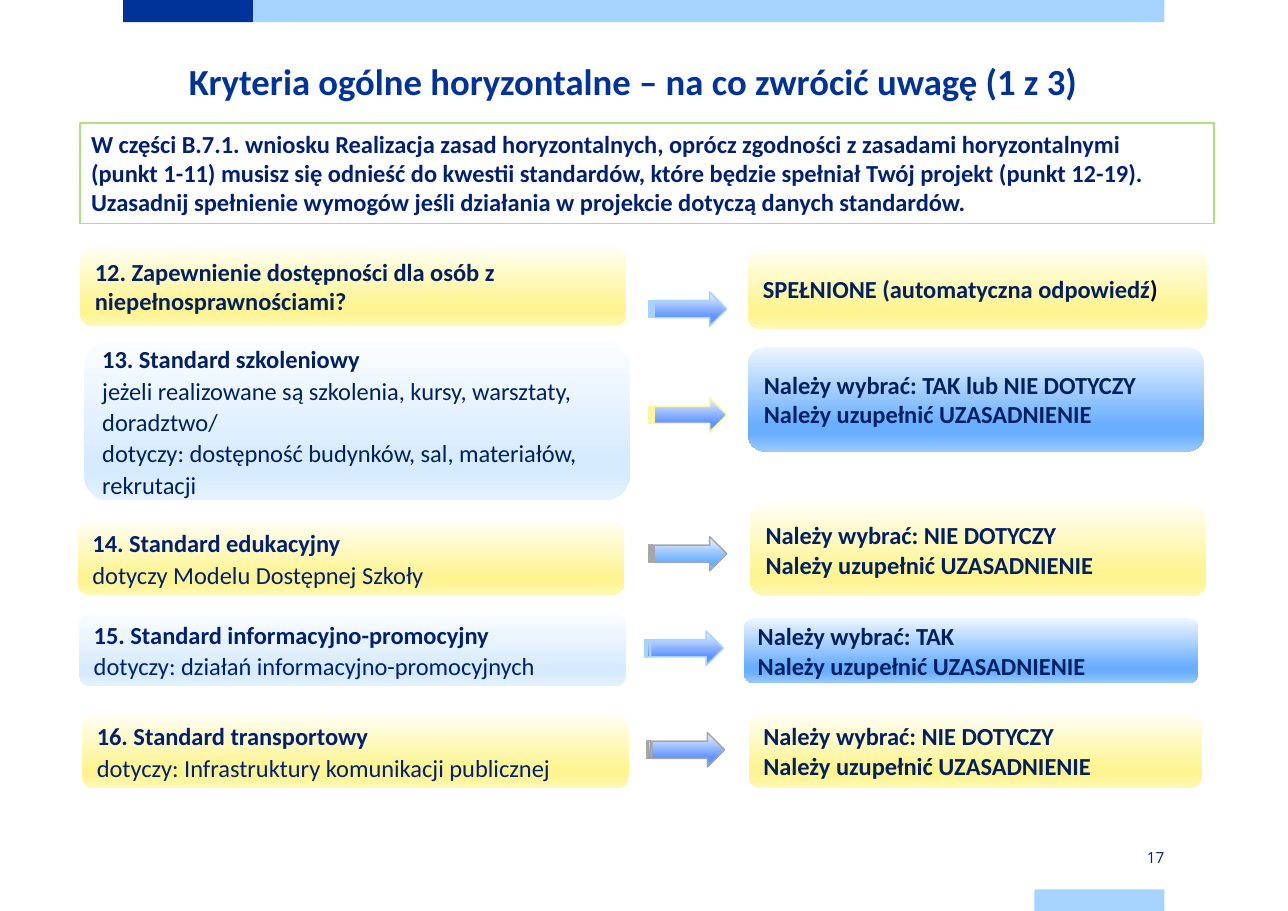
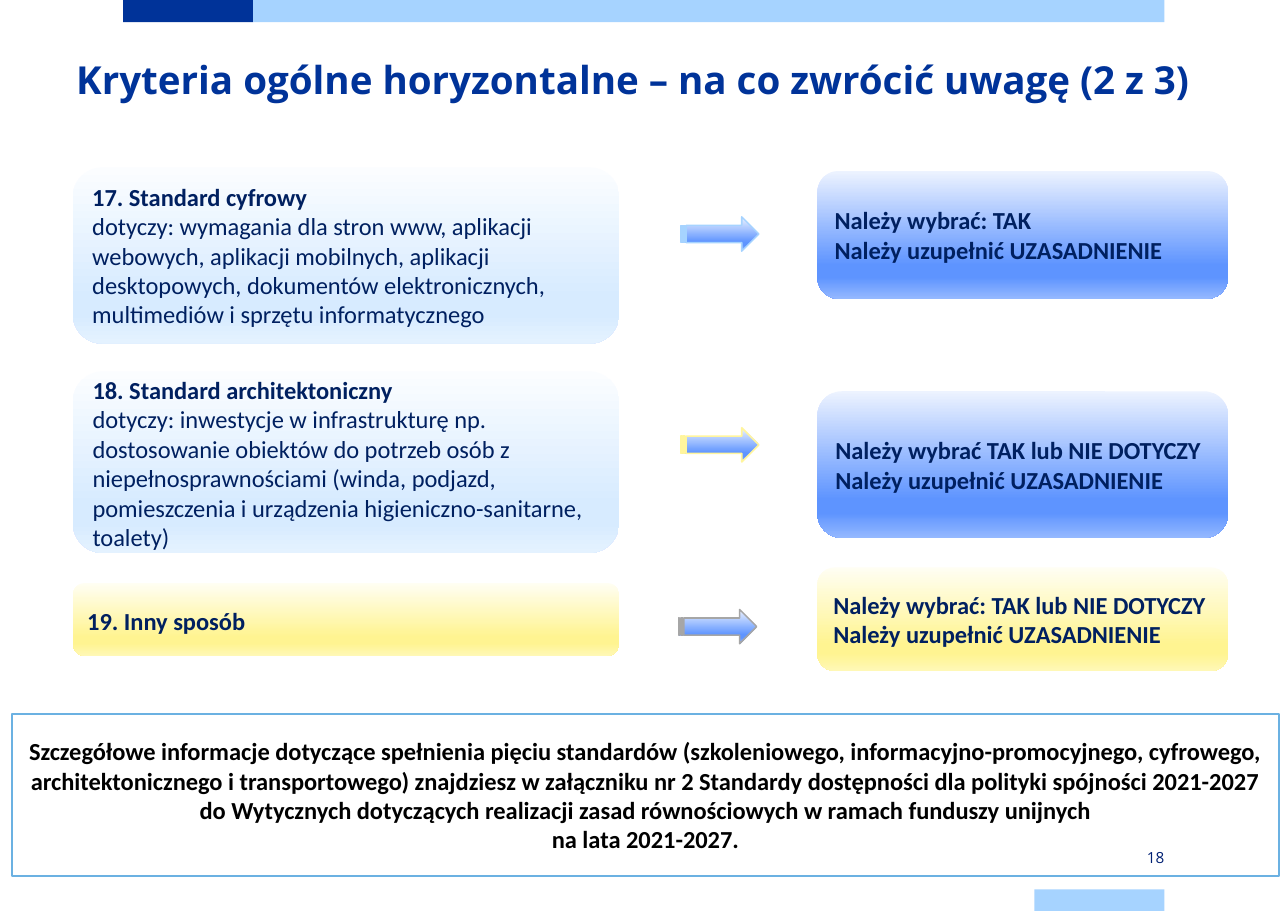
from dataclasses import dataclass

from lxml.etree import SubElement
from pptx import Presentation
from pptx.dml.color import RGBColor
from pptx.enum.shapes import MSO_SHAPE
from pptx.enum.text import MSO_ANCHOR, PP_ALIGN
from pptx.oxml.ns import qn
from pptx.util import Cm, Pt


@dataclass(frozen=True)
class Theme:
    """Colours, gradients, fonts and type sizes of the deck."""
    blue: str = "003399"
    pale: str = "A6D3FF"
    navy: str = "002060"
    ink: str = "002073"
    black: str = "000000"
    white: str = "FFFFFF"
    green: str = "B2DE82"
    lemon: str = "FFF59D"
    grey: str = "A6A6A6"
    frame: str = "6BB1E2"
    yellow: tuple = ("FFFEF3", "FFF491", "FFF491", "FFF8B6")
    sky: tuple = ("FBFDFF", "D7EBFF", "D7EBFF", "E4F2FF")
    azure: tuple = ("EEF6FF", "69AEFF", "69AEFF", "9BC9FF")
    cobalt: tuple = ("EDF3FF", "5E94FF", "5E94FF", "94B8FF")
    stops: tuple = (0, 74, 83, 100)
    body_font: str = "Calibri"
    head_font: str = "Open Sans"
    body: float = 16
    small: float = 10


T = Theme()
JUSTIFY = "Należy uzupełnić UZASADNIENIE"
EITHER = "Należy wybrać: TAK lub NIE DOTYCZY"
NOT_APPLICABLE = "Należy wybrać: NIE DOTYCZY"


def write(p, text, *, size=T.body, font=T.body_font, color=T.navy, bold=True):
    """Add a formatted run to a paragraph."""
    r = p.add_run()
    r.text = text
    r.font.size, r.font.name, r.font.bold = Pt(size), font, bold
    r.font.color.rgb = RGBColor.from_string(color)


def fill_text(sp, lines, *, anchor=MSO_ANCHOR.MIDDLE, align=PP_ALIGN.LEFT,
              spacing=(), plain_after=None, insets=None, **fmt):
    """Write one paragraph per line; lines from plain_after on are not bold."""
    tf = sp.text_frame
    tf.word_wrap, tf.vertical_anchor = True, anchor
    if insets:
        tf.margin_left = tf.margin_right = Cm(insets[0])
        tf.margin_top = tf.margin_bottom = Cm(insets[1])
    for i, line in enumerate(lines):
        p = tf.paragraphs[0] if i == 0 else tf.add_paragraph()
        p.alignment = align
        if i < len(spacing):
            p.line_spacing = spacing[i]
        bold = fmt.get("bold", plain_after is None or i < plain_after)
        write(p, line, **{**fmt, "bold": bold})


def paint(sp, fill):
    """Fill a shape with a plain colour or a top-to-bottom gradient."""
    if isinstance(fill, str):
        sp.fill.solid()
        sp.fill.fore_color.rgb = RGBColor.from_string(fill)
        return
    sp.fill.gradient()
    sp.fill.gradient_angle = 270
    gs_list = sp._element.spPr.find(".//" + qn("a:gsLst"))
    gs_list.clear()
    for pos, color in zip(T.stops, fill):
        gs = SubElement(gs_list, qn("a:gs"), pos=str(pos * 1000))
        SubElement(gs, qn("a:srgbClr"), val=color)


def add_box(s, kind, at, fill, line=None):
    """Add a shape without shadow, outlined only if a line colour is given."""
    sp = s.shapes.add_shape(kind, *map(Cm, at))
    sp.shadow.inherit = False
    paint(sp, fill)
    if line:
        sp.line.color.rgb = RGBColor.from_string(line)
        sp.line.width = Pt(1)
    else:
        sp.line.fill.background()
    return sp


def add_label(s, at, text, **fmt):
    """Add a text box with one line of text."""
    fill_text(s.shapes.add_textbox(*map(Cm, at)), [text], **fmt)


def add_page(prs, title, number, **title_fmt):
    """Add a slide with the bands, title and page number."""
    s = prs.slides.add_slide(prs.slide_layouts[6])
    for at, color in (((2.84, 0, 3, 0.51), T.blue),
                      ((5.84, 0, 21.01, 0.51), T.pale),
                      ((23.85, 20.5, 3, 0.51), T.pale)):
        add_box(s, MSO_SHAPE.RECTANGLE, at, color)
    add_label(s, (1.24, 1.09, 26.72, 2.64), title, color=T.blue,
              anchor=MSO_ANCHOR.TOP, align=PP_ALIGN.CENTER,
              spacing=(Pt(36),), insets=(0, 0), **title_fmt)
    return s


def add_number(s, number):
    """Add the page number above the bottom band."""
    add_label(s, (23.85, 19.51, 3, 0.51), str(number), size=T.small,
              font=T.head_font, color=T.ink, bold=False,
              align=PP_ALIGN.RIGHT, insets=(0, 0.2))


def add_criterion(s, at, fill, lines, arrow, answer_at, answer_fill, answer,
                  color=T.navy, spacing=(1.07,) * 3):
    """Add a criterion, its arrow and its answer; return the answer shape."""
    x, y, h = at
    sp = add_box(s, MSO_SHAPE.ROUNDED_RECTANGLE, (x, y, 12.6, h), fill)
    fill_text(sp, lines, color=color, spacing=spacing, plain_after=1)
    ax, ay, arrow_fill, arrow_line = arrow
    add_box(s, MSO_SHAPE.STRIPED_RIGHT_ARROW, (ax, ay, 1.8, 0.79),
            arrow_fill, arrow_line)
    sp = add_box(s, MSO_SHAPE.ROUNDED_RECTANGLE, answer_at, answer_fill)
    fill_text(sp, answer)
    return sp


def build_first(prs):
    """Build the slide with criteria 12 to 16."""
    s = add_page(prs, "Kryteria ogólne horyzontalne – na co zwrócić uwagę (1 z 3)",
                 17, size=24)
    intro = add_box(s, MSO_SHAPE.RECTANGLE, (1.85, 2.84, 26.14, 2.31),
                    T.white, T.green)
    fill_text(intro, [
        "W części B.7.1. wniosku Realizacja zasad horyzontalnych, oprócz "
        "zgodności z zasadami horyzontalnymi",
        "(punkt 1-11) musisz się odnieść do kwestii standardów, które będzie "
        "spełniał Twój projekt (punkt 12-19).",
        "Uzasadnij spełnienie wymogów jeśli działania w projekcie dotyczą "
        "danych standardów.",
    ], anchor=MSO_ANCHOR.TOP, color=T.ink)
    sp = add_criterion(
        s, (1.85, 5.69, 1.83), T.yellow,
        ["12. Zapewnienie dostępności dla osób z niepełnosprawnościami?"],
        (14.96, 6.73, T.cobalt, T.pale),
        (17.25, 5.74, 10.59, 1.85), T.yellow,
        ["SPEŁNIONE (automatyczna odpowiedź"], spacing=())
    write(sp.text_frame.paragraphs[0], ")", color=T.black)
    add_criterion(
        s, (1.93, 7.87, 3.66), T.sky,
        ["13. Standard szkoleniowy",
         "jeżeli realizowane są szkolenia, kursy, warsztaty, doradztwo/",
         "dotyczy: dostępność budynków, sal, materiałów, rekrutacji"],
        (14.96, 9.17, T.cobalt, T.lemon),
        (17.25, 8, 10.52, 2.41), T.azure, [EITHER, JUSTIFY])
    add_criterion(
        s, (1.8, 12.01, 1.7), T.yellow,
        ["14. Standard edukacyjny", "dotyczy Modelu Dostępnej Szkoły"],
        (14.96, 12.37, T.azure, T.grey),
        (17.3, 11.61, 10.52, 2.13), T.yellow,
        [NOT_APPLICABLE, JUSTIFY], color=T.ink)
    add_criterion(
        s, (1.83, 14.12, 1.7), T.sky,
        ["15. Standard informacyjno-promocyjny",
         "dotyczy: działań informacyjno-promocyjnych"],
        (14.88, 14.55, T.cobalt, T.pale),
        (17.15, 14.25, 10.49, 1.5), T.azure,
        ["Należy wybrać: TAK", JUSTIFY], color=T.ink)
    add_criterion(
        s, (1.9, 16.46, 1.7), T.yellow,
        ["16. Standard transportowy",
         "dotyczy: Infrastruktury komunikacji publicznej"],
        (14.91, 16.89, T.cobalt, T.grey),
        (17.27, 16.46, 10.44, 1.7), T.yellow,
        [NOT_APPLICABLE, JUSTIFY], color=T.ink)
    add_number(s, 17)


def build_second(prs):
    """Build the slide with criteria 17 to 19."""
    s = add_page(prs, "Kryteria ogólne horyzontalne – na co zwrócić uwagę (2 z 3)",
                 18, size=25.2, font=T.head_font)
    add_criterion(
        s, (1.68, 3.86, 4.06), T.sky,
        ["17. Standard cyfrowy",
         "dotyczy: wymagania dla stron www, aplikacji webowych, aplikacji "
         "mobilnych, aplikacji desktopowych, dokumentów elektronicznych, "
         "multimediów i sprzętu informatycznego"],
        (15.7, 5, T.cobalt, T.pale),
        (18.85, 3.94, 9.47, 2.95), T.cobalt,
        ["Należy wybrać: TAK", JUSTIFY], spacing=())
    add_criterion(
        s, (1.68, 8.56, 4.19), T.sky,
        ["18. Standard architektoniczny",
         "dotyczy: inwestycje w infrastrukturę np. dostosowanie obiektów do "
         "potrzeb osób z niepełnosprawnościami (winda, podjazd, "
         "pomieszczenia i urządzenia higieniczno-sanitarne, toalety)"],
        (15.7, 9.86, T.cobalt, T.lemon),
        (18.85, 9.02, 9.47, 3.38), T.cobalt,
        ["Należy wybrać TAK lub NIE DOTYCZY", JUSTIFY], spacing=(1.07,))
    add_criterion(
        s, (1.68, 13.44, 1.68), T.yellow, ["19. Inny sposób"],
        (15.65, 14.05, T.cobalt, T.grey),
        (18.85, 13.08, 9.47, 2.39), T.yellow, [EITHER, JUSTIFY])
    note = add_box(s, MSO_SHAPE.RECTANGLE, (0.28, 16.46, 29.21, 3.73),
                   T.white, T.frame)
    fill_text(note, [
        "Szczegółowe informacje dotyczące spełnienia pięciu standardów "
        "(szkoleniowego, informacyjno-promocyjnego, cyfrowego, "
        "architektonicznego i transportowego) znajdziesz w załączniku nr 2 "
        "Standardy dostępności dla polityki spójności 2021-2027 do "
        "Wytycznych dotyczących realizacji zasad równościowych w ramach "
        "funduszy unijnych",
        "na lata 2021-2027.",
    ], align=PP_ALIGN.CENTER, color=T.black)
    add_number(s, 18)


def main():
    """Build and save the deck."""
    prs = Presentation()
    prs.slide_width, prs.slide_height = Cm(29.7), Cm(21)
    build_first(prs)
    build_second(prs)
    prs.save("out.pptx")


if __name__ == "__main__":
    main()
